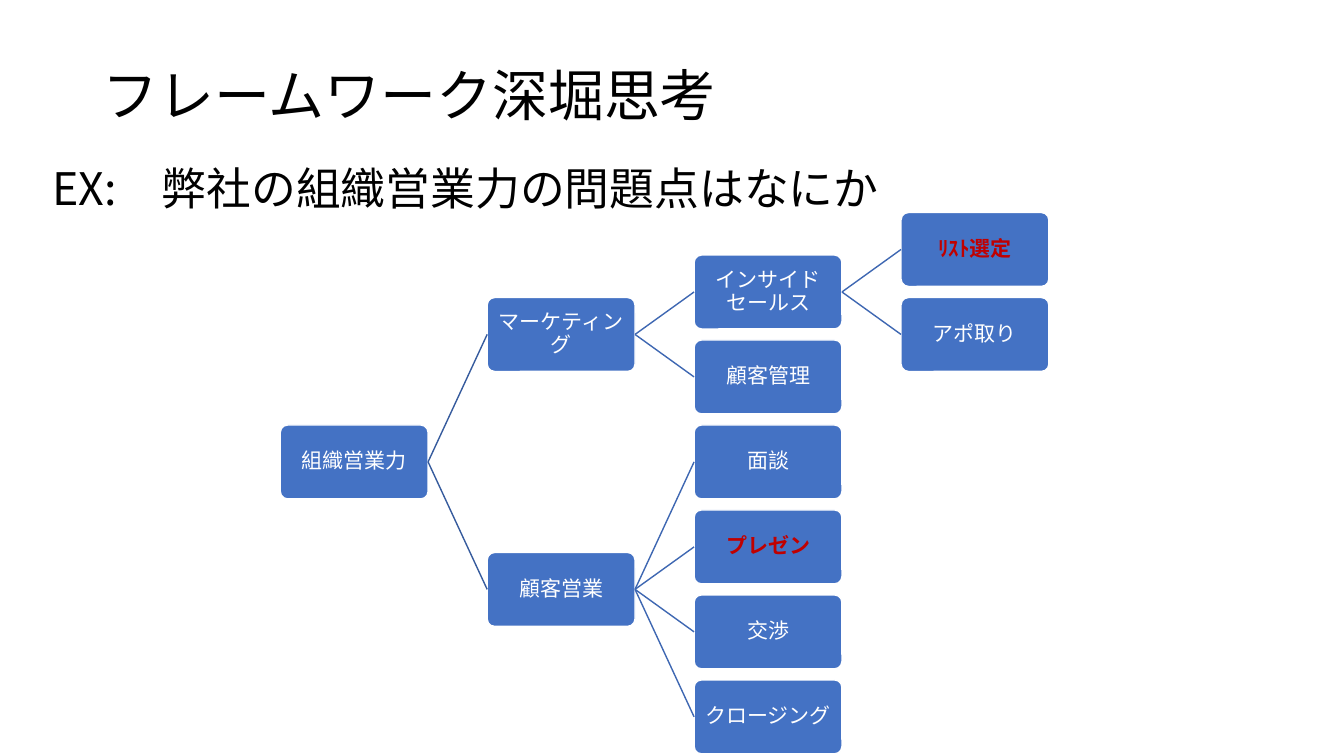
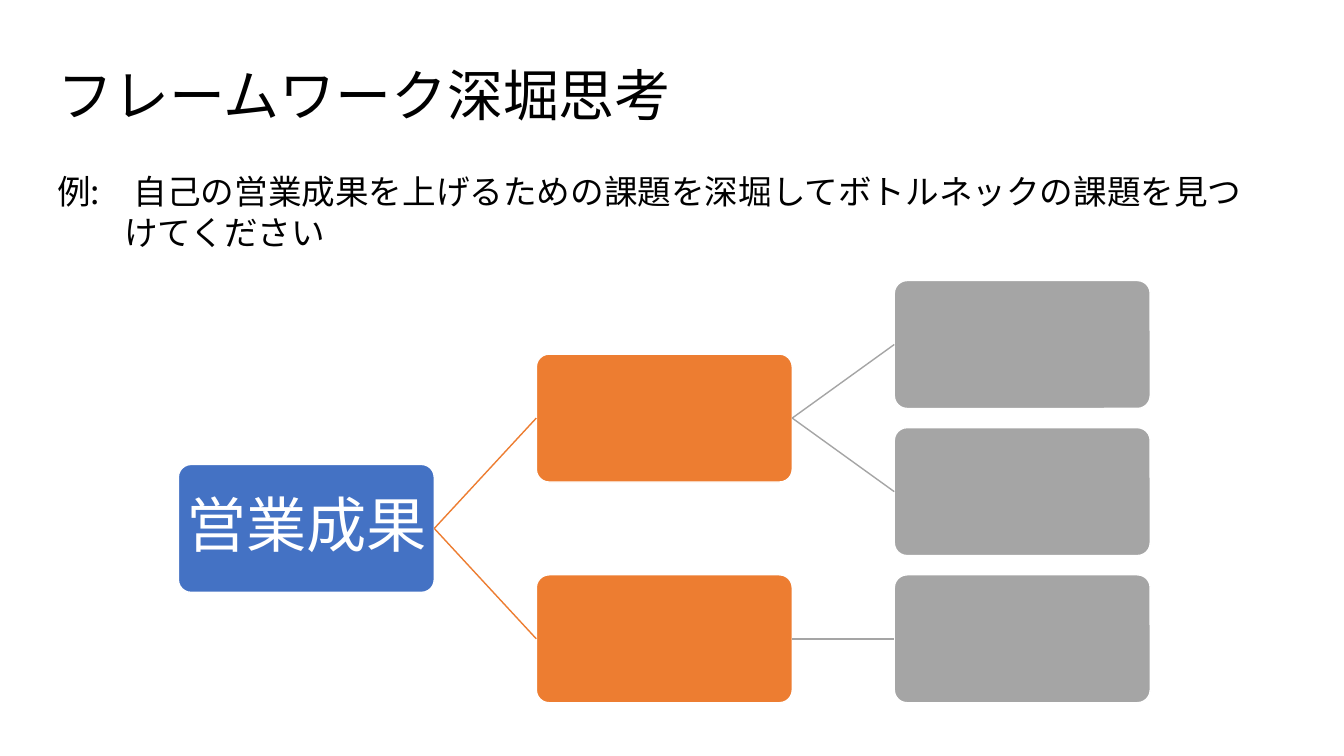
from dataclasses import dataclass
from lxml.etree import SubElement
from pptx import Presentation
from pptx.dml.color import RGBColor
from pptx.enum.shapes import MSO_CONNECTOR, MSO_SHAPE
from pptx.enum.text import MSO_ANCHOR, PP_ALIGN
from pptx.oxml.ns import qn
from pptx.util import Pt

FONT = "Noto Sans CJK JP"
BLACK, WHITE, RED = "000000", "FFFFFF", "C00000"
BLUE, ORANGE, GRAY = "4472C4", "ED7D31", "A5A5A5"
NAVY, STEEL = "365B9D", "3E67B2"
TITLE = "フレームワーク深堀思考"


@dataclass(frozen=True)
class Node:
    """A box of a tree; a leaf states its row, a parent centres on its children."""
    text: str = ""
    row: float = 0
    kids: tuple["Node", ...] = ()
    hot: bool = False

    def level(self) -> float:
        """Give the row, midway between the first and last child."""
        if not self.kids:
            return self.row
        return (self.kids[0].level() + self.kids[-1].level()) / 2


@dataclass(frozen=True)
class Style:
    """The grid and look of a tree, with colours by depth."""
    left: float
    top: float
    width: float
    height: float
    across: float
    down: float
    margin: float
    size: float
    fills: tuple[str, ...]
    lines: tuple[str, ...]


@dataclass(frozen=True)
class Line:
    """A paragraph of a text box."""
    text: str
    indent: float = 0


@dataclass(frozen=True)
class Box:
    """A text box with its place and type size."""
    left: float
    top: float
    width: float
    height: float
    size: float
    lines: tuple[Line, ...]


@dataclass(frozen=True)
class Page:
    """The content of one slide."""
    title: Box
    lead: Box
    root: Node
    style: Style


def color(code: str) -> RGBColor:
    """Turn a hex string into a colour."""
    return RGBColor.from_string(code)


def write(para, text: str, size: float, code: str, bold: bool = False) -> None:
    """Add one run to a paragraph."""
    run = para.add_run()
    run.text = text
    font = run.font
    font.name, font.size, font.bold = FONT, Pt(size), bold
    font.color.rgb = color(code)
    SubElement(font._element, qn("a:ea")).set("typeface", FONT)


def label(slide, box: Box, anchor: MSO_ANCHOR, space: float) -> None:
    """Draw a text box."""
    area = slide.shapes.add_textbox(Pt(box.left), Pt(box.top), Pt(box.width), Pt(box.height))
    frame = area.text_frame
    frame.word_wrap = True
    frame.vertical_anchor = anchor
    for i, line in enumerate(box.lines):
        para = frame.add_paragraph() if i else frame.paragraphs[0]
        para.line_spacing = space
        if line.indent:
            para._p.get_or_add_pPr().set("marL", str(Pt(line.indent)))
        write(para, line.text, box.size, BLACK)


def block(slide, node: Node, style: Style, depth: int):
    """Draw the box of a node."""
    shape = slide.shapes.add_shape(
        MSO_SHAPE.ROUNDED_RECTANGLE,
        Pt(style.left + depth * style.across), Pt(style.top + node.level() * style.down),
        Pt(style.width), Pt(style.height))
    shape.adjustments[0] = 0.1
    shape.shadow.inherit = False
    shape.fill.solid()
    shape.fill.fore_color.rgb = color(style.fills[depth])
    shape.line.color.rgb = color(WHITE)
    shape.line.width = Pt(1)
    if node.text:
        frame = shape.text_frame
        frame.word_wrap = True
        frame.vertical_anchor = MSO_ANCHOR.MIDDLE
        frame.margin_left = frame.margin_right = Pt(style.margin)
        frame.margin_top = frame.margin_bottom = Pt(style.margin)
        para = frame.paragraphs[0]
        para.alignment = PP_ALIGN.CENTER
        para.line_spacing = 0.9
        write(para, node.text, style.size, RED if node.hot else WHITE, node.hot)
    return shape


def link(slide, start, end, code: str) -> None:
    """Join the right side of one box to the left side of another."""
    wire = slide.shapes.add_connector(MSO_CONNECTOR.STRAIGHT, 0, 0, 0, 0)
    wire.begin_connect(start, 3)
    wire.end_connect(end, 1)
    wire.line.color.rgb = color(code)
    wire.line.width = Pt(1)
    SubElement(wire._element.spPr, qn("a:effectLst"))


def tree(slide, node: Node, style: Style, depth: int = 0):
    """Draw a node with all its branches."""
    shape = block(slide, node, style, depth)
    for kid in node.kids:
        link(slide, shape, tree(slide, kid, style, depth + 1), style.lines[depth])
    return shape


SALES = Node("組織営業力", kids=(
    Node("マーケティング", kids=(
        Node("インサイドセールス", kids=(
            Node("ﾘｽﾄ選定", 0, hot=True),
            Node("アポ取り", 1))),
        Node("顧客管理", 1.5))),
    Node("顧客営業", kids=(
        Node("面談", 2.5),
        Node("プレゼン", 3.5, hot=True),
        Node("交渉", 4.5),
        Node("クロージング", 5.5)))))

RESULT = Node("営業成果", kids=(
    Node(kids=(Node(row=0), Node(row=1))),
    Node(kids=(Node(row=2),))))

PAGES = (
    Page(
        Box(66, 18, 828, 104.4, 40, (Line(TITLE),)),
        Box(30.2, 110.9, 612, 46, 32, (Line("EX:　弊社の組織営業力の問題点はなにか"),)),
        SALES,
        Style(200.2, 151.8, 105.6, 52.8, 147.8, 60.7, 1, 15,
              (BLUE,) * 4, (NAVY, STEEL, STEEL))),
    Page(
        Box(33.8, 18, 859.7, 104.4, 40, (Line(TITLE),)),
        Box(33.8, 118.8, 866.9, 65.5, 24, (
            Line("例:　自己の営業成果を上げるための課題を深堀してボトルネックの課題を見つ"),
            Line("けてください", 48))),
        RESULT,
        Style(127.4, 200.4, 182.8, 91.4, 255.7, 105.1, 2, 43,
              (BLUE, ORANGE, GRAY), (ORANGE, GRAY))),
)


def main() -> None:
    """Build and save the slides."""
    deck = Presentation()
    deck.slide_width, deck.slide_height = Pt(960), Pt(540)
    for page in PAGES:
        slide = deck.slides.add_slide(deck.slide_layouts[6])
        label(slide, page.title, MSO_ANCHOR.MIDDLE, 0.9)
        tree(slide, page.root, page.style)
        label(slide, page.lead, MSO_ANCHOR.TOP, 1.0)
    deck.save("out.pptx")


if __name__ == "__main__":
    main()
